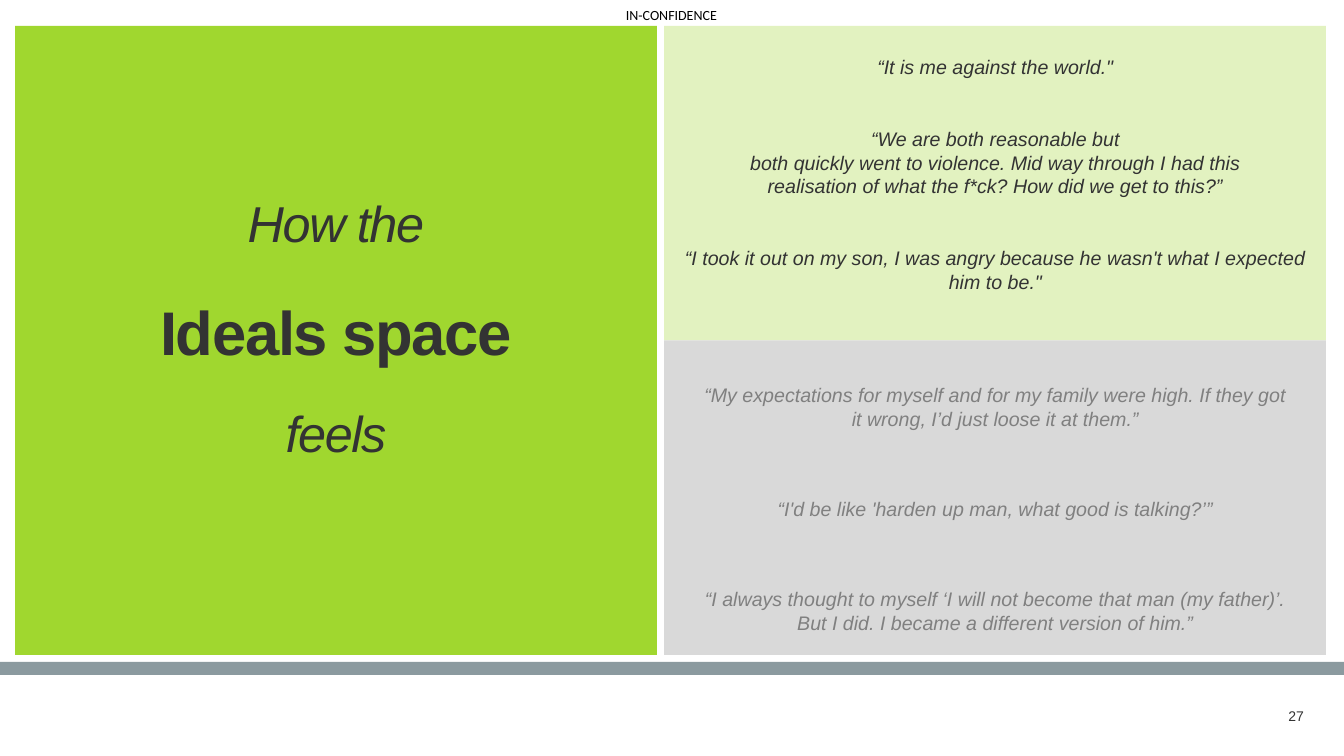
"""Builds the slide of quotes on how the Ideals space feels."""
from lxml import etree
from pptx import Presentation
from pptx.dml.color import RGBColor
from pptx.enum.shapes import MSO_SHAPE
from pptx.enum.text import MSO_ANCHOR, PP_ALIGN
from pptx.oxml.ns import qn
from pptx.util import Emu, Pt

RECTANGLE = MSO_SHAPE.RECTANGLE
TOP, MIDDLE = MSO_ANCHOR.TOP, MSO_ANCHOR.MIDDLE
LEFT, CENTER, RIGHT = PP_ALIGN.LEFT, PP_ALIGN.CENTER, PP_ALIGN.RIGHT

GREEN = RGBColor(0xA0, 0xD7, 0x2F)
SLATE = RGBColor(0x8B, 0x9A, 0x9F)
PALE_GREY = RGBColor(0xD9, 0xD9, 0xD9)
DARK = RGBColor(0x33, 0x33, 0x33)
GREY = RGBColor(0x80, 0x80, 0x80)
BLACK = RGBColor(0, 0, 0)

EMU_PER_PX = 914400 / 100.8
SLIDE_WIDTH, SLIDE_HEIGHT = 1344, 756
PANEL_TOP, PANEL_HEIGHT = 26, 629
QUOTE_LEFT, QUOTE_WIDTH = 667, 657
LINE_HEIGHT, QUOTE_PADDING = 23, 11

PANELS = [
    ((15, PANEL_TOP, 642, PANEL_HEIGHT), GREEN, 100),
    ((0, 662, SLIDE_WIDTH, 13), SLATE, 100),
    ((664, PANEL_TOP, 662, PANEL_HEIGHT / 2), GREEN, 30),
    ((664, PANEL_TOP + PANEL_HEIGHT / 2, 662, PANEL_HEIGHT / 2), PALE_GREY, 100),
]
TITLE_BOX = (128, 162, 416, 288)
TITLE_LINES = [("How the", 36, False), ("Ideals space", 44, True), ("feels", 36, False)]
QUOTES = [
    (50, 1, DARK, "“It is me against the world.\""),
    (122, 3, DARK, "“We are both reasonable but\vboth quickly went to violence. Mid way through I had this"
                   "\vrealisation of what the f*ck? How did we get to this?”"),
    (241, 2, DARK, "“I took it out on my son, I was angry because he wasn't what I expected him to be.\""),
    (378, 2, GREY, "“My expectations for myself and for my family were high. If they got"
                   "\vit wrong, I’d just loose it at them.”"),
    (492, 1, GREY, "“I'd be like 'harden up man, what good is talking?’”"),
    (582, 2, GREY, "“I always thought to myself ‘I will not become that man (my father)’."
                   "\vBut I did. I became a different version of him.”"),
]


def place(box):
    """Turns a box in px into EMU lengths."""
    return [Emu(round(length * EMU_PER_PX)) for length in box]


def add_panel(slide, box, color, opacity):
    """Adds a plain filled rectangle."""
    shape = slide.shapes.add_shape(RECTANGLE, *place(box))
    shape.shadow.inherit = False
    shape.fill.solid()
    shape.fill.fore_color.rgb = color
    shape.line.fill.background()
    if opacity < 100:
        color_element = shape.fill._xPr.find(qn("a:solidFill"))[0]
        etree.SubElement(color_element, qn("a:alpha"), val=str(opacity * 1000))


def add_text(slide, box, text, size, color, align=CENTER, anchor=TOP,
             font="Arial", italic=False, inset=True, wrap=True):
    """Adds a text box and returns its paragraphs."""
    text_frame = slide.shapes.add_textbox(*place(box)).text_frame
    text_frame.word_wrap = wrap
    text_frame.vertical_anchor = anchor
    if not inset:
        text_frame.margin_left = text_frame.margin_right = 0
        text_frame.margin_top = text_frame.margin_bottom = 0
    text_frame.text = text
    for paragraph in text_frame.paragraphs:
        paragraph.alignment = align
        for run in paragraph.runs:
            run.font.name = font
            run.font.size = Pt(size)
            run.font.italic = italic
            run.font.color.rgb = color
    return text_frame.paragraphs


def add_title(slide):
    """Adds the three title lines."""
    text = "\n".join(line for line, size, bold in TITLE_LINES)
    paragraphs = add_text(slide, TITLE_BOX, text, 36, DARK, inset=False)
    for index, (paragraph, (line, size, bold)) in enumerate(zip(paragraphs, TITLE_LINES)):
        paragraph.line_spacing = 1.5
        if index:
            paragraph.space_before = Pt(3)
        run = paragraph.runs[0]
        run.font.size = Pt(size)
        run.font.bold = bold
        run.font.italic = not bold
        run.font._element.set("spc", "-100")


def main():
    """Builds and saves the slide."""
    presentation = Presentation()
    presentation.slide_width, presentation.slide_height = place((SLIDE_WIDTH, SLIDE_HEIGHT))
    slide = presentation.slides.add_slide(presentation.slide_layouts[6])
    for box, color, opacity in PANELS:
        add_panel(slide, box, color, opacity)
    add_text(slide, (626, 7, 95, 17), "IN-CONFIDENCE", 10, BLACK, LEFT,
             font="Calibri", inset=False, wrap=False)
    add_text(slide, (1266, 705, 38, 21), "27", 10, DARK, RIGHT, MIDDLE, inset=False)
    add_title(slide)
    for top, lines, color, quote in QUOTES:
        box = (QUOTE_LEFT, top, QUOTE_WIDTH, lines * LINE_HEIGHT + QUOTE_PADDING)
        add_text(slide, box, quote, 14, color, italic=True)
    presentation.save("out.pptx")


if __name__ == "__main__":
    main()
